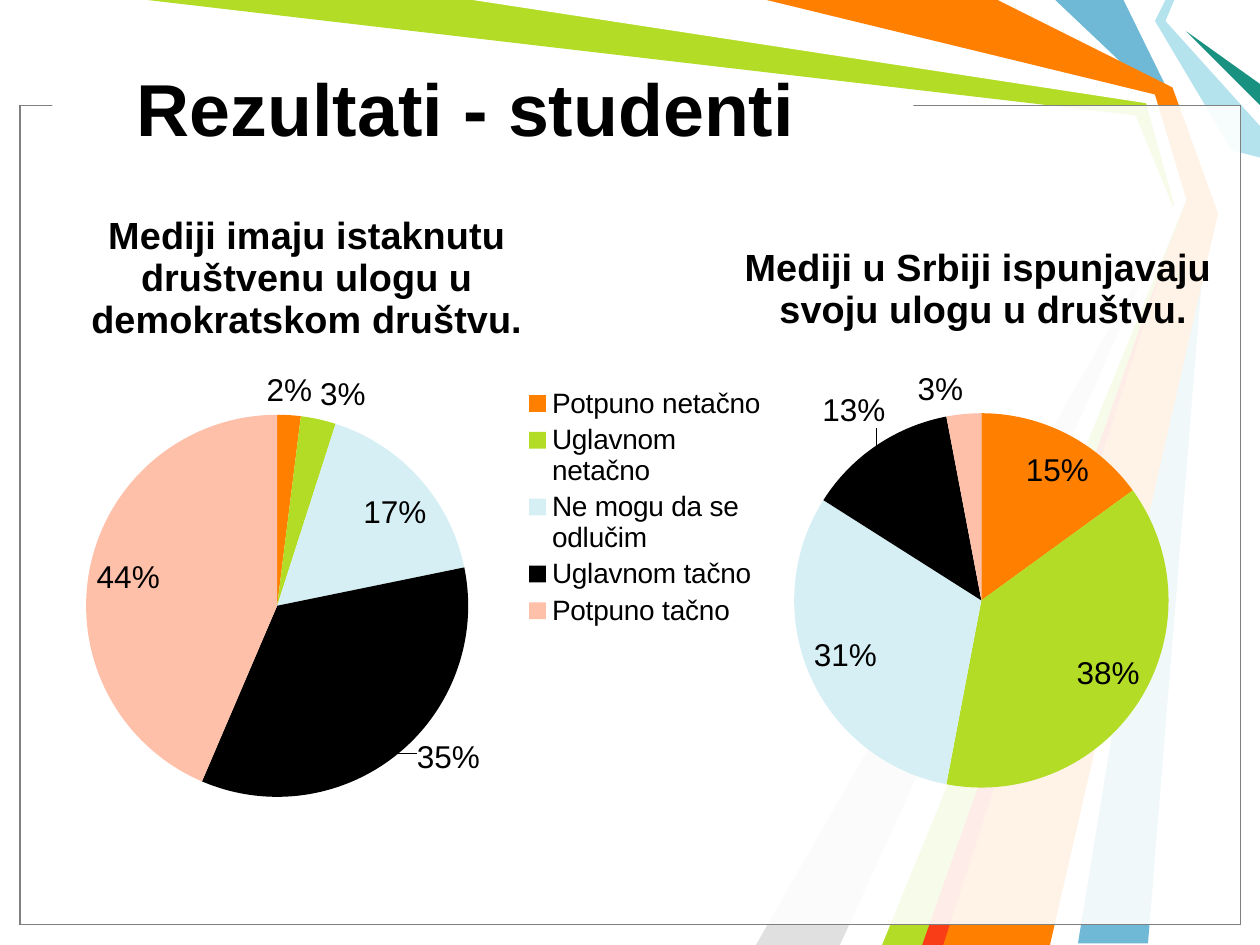
from lxml import etree
from pptx import Presentation
from pptx import util as u
from pptx.chart import data as chart_data
from pptx.dml.color import RGBColor
from pptx.enum import chart as ch, shapes, text
from pptx.oxml import ns

ORANGE = RGBColor(0xFF, 0x7F, 0x00)
GREEN = RGBColor(0xB3, 0xDC, 0x27)
ICE = RGBColor(0xD6, 0xEF, 0xF5)
BLACK = RGBColor(0, 0, 0)
PEACH = RGBColor(0xFF, 0xC0, 0xAA)
BLUE = RGBColor(0x6F, 0xB9, 0xD7)
SILVER = RGBColor(0xE0, 0xE0, 0xE0)
WHITE = RGBColor(0xFF, 0xFF, 0xFF)
AQUA = RGBColor(0xB4, 0xE3, 0xEE)
TEAL = RGBColor(0x18, 0x91, 0x80)
RED = RGBColor(0xF9, 0x3D, 0x17)
GRAY = RGBColor(0x80, 0x80, 0x80)

FONT = "Arial"
SLICE_COLORS = [ORANGE, GREEN, ICE, BLACK, PEACH]
BLACK_SLICE = 3
RIBBONS = [
    (BLUE, [(642, 0), (669, 55), (690, 120), (656, 539), (616, 539),
            (684, 120), (660, 54), (603, 0)]),
    (GREEN, [(84, 0), (276, 0), (658, 56), (678, 122), (534, 540),
             (498, 540), (673, 125), (649, 66)]),
    (SILVER, [(480, 540), (667, 130), (432, 540)]),
    (WHITE, [(270, 0), (655, 59), (671, 117), (486, 540), (504, 540),
             (678, 114), (660, 54), (432, 0)]),
    (AQUA, [(666, 0), (660, 12), (704, 86), (720, 90), (720, 72),
            (666, 12), (671, 0)]),
    (TEAL, [(720, 60), (678, 18), (720, 48)]),
    (ORANGE, [(438, 0), (570, 0), (670, 50), (696, 122), (600, 540),
              (528, 540), (678, 114), (660, 54)]),
    (RED, [(527, 540), (671, 132), (539, 540)]),
]


def points(box):
    return [u.Pt(length) for length in box]


def paint(shape, fill, line=None):
    shape.shadow.inherit = False
    shape.fill.solid()
    shape.fill.fore_color.rgb = fill
    if line is None:
        shape.line.fill.background()
    else:
        shape.line.color.rgb = line
        shape.line.width = u.Pt(0.75)


def add_ribbons(page):
    for color, corners in RIBBONS:
        builder = page.shapes.build_freeform(*corners[0], scale=u.Pt(1))
        builder.add_line_segments(corners[1:], close=True)
        paint(builder.convert_to_shape(), color)


def add_frame(page, box, gap):
    for line in (BLACK, GRAY):
        veil = page.shapes.add_shape(shapes.MSO_SHAPE.RECTANGLE, *points(box))
        paint(veil, WHITE, line)
        color = veil.element.xpath("p:spPr/a:solidFill/a:srgbClr")[0]
        etree.SubElement(color, ns.qn("a:alpha"), val="69000")
    left, top, width, height = gap
    mask = page.shapes.add_shape(
        shapes.MSO_SHAPE.RECTANGLE,
        *points((box[0] + left, box[1] + top, width, height)))
    paint(mask, WHITE)


def add_title(page, box, words):
    title = page.shapes.title
    title.left, title.top, title.width, title.height = points(box)
    title.text_frame.text = words
    title.text_frame.vertical_anchor = text.MSO_ANCHOR.MIDDLE
    para = title.text_frame.paragraphs[0]
    para.alignment = text.PP_ALIGN.LEFT
    para.font.name = FONT
    para.font.size = u.Pt(42)
    para.font.bold = True
    para.font.color.rgb = BLACK
    title.element.getparent().append(title.element)


def set_layout(parent, index, **values):
    for old in parent.findall(ns.qn("c:layout")):
        parent.remove(old)
    layout = etree.Element(ns.qn("c:layout"))
    manual = etree.SubElement(layout, ns.qn("c:manualLayout"))
    for tag, value in values.items():
        etree.SubElement(manual, ns.qn(f"c:{tag}"), val=str(value))
    parent.insert(index, layout)


def add_pie(page, box, heading, categories, values, name, heading_at, pie_at,
            label_shift, legend_at=None):
    data = chart_data.CategoryChartData()
    data.categories = categories
    data.add_series(name, values)
    chart = page.shapes.add_chart(
        ch.XL_CHART_TYPE.PIE, *points(box), data).chart
    chart.font.name = FONT
    chart.font.size = u.Pt(18)
    chart.font.color.rgb = BLACK

    chart.has_title = True
    frame = chart.chart_title.text_frame
    frame.text = heading
    for para in frame.paragraphs:
        para.font.name = FONT
        para.font.size = u.Pt(21.6)
        para.font.bold = True
        para.font.color.rgb = BLACK
    set_layout(chart.element.xpath("c:chart/c:title")[0], 1,
               xMode="edge", yMode="edge", x=heading_at[0], y=heading_at[1])

    plot = chart.plots[0]
    plot.vary_by_categories = True
    series = plot.series[0]
    for index, color in enumerate(SLICE_COLORS):
        fill = series.points[index].format.fill
        fill.solid()
        fill.fore_color.rgb = color
    labels = series.data_labels
    labels.show_value = False
    labels.show_percentage = True
    labels.number_format = "0%"
    labels.number_format_is_linked = False
    labels.position = ch.XL_LABEL_POSITION.BEST_FIT
    label = series.points[BLACK_SLICE].data_label
    label.position = ch.XL_LABEL_POSITION.OUTSIDE_END
    element = chart.element.xpath(".//c:dLbl")[0]
    element.find(ns.qn("c:showVal")).set("val", "0")
    element.find(ns.qn("c:showPercent")).set("val", "1")
    set_layout(element, 1, x=label_shift[0], y=label_shift[1])

    x, y, w, h = pie_at
    set_layout(chart.element.xpath("c:chart/c:plotArea")[0], 0,
               layoutTarget="inner", xMode="edge", yMode="edge",
               x=x, y=y, w=w, h=h)
    chart.has_legend = legend_at is not None
    if legend_at:
        chart.legend.position = ch.XL_LEGEND_POSITION.RIGHT
        chart.legend.include_in_layout = False
        chart.legend.font.name = FONT
        chart.legend.font.size = u.Pt(16)
        chart.legend.font.color.rgb = BLACK
        x, y, w, h = legend_at
        set_layout(chart.element.xpath("c:chart/c:legend")[0], 1,
                   xMode="edge", yMode="edge", x=x, y=y, w=w, h=h)


def main():
    deck = Presentation()
    deck.slide_width, deck.slide_height = u.Pt(720), u.Pt(540)
    page = deck.slides.add_slide(deck.slide_layouts[5])
    add_ribbons(page)
    add_frame(page, (11.5, 60.5, 697.5, 468), (18.5, -7.5, 492, 12.5))
    add_title(page, (71, 16, 496, 90), "Rezultati - studenti")
    role = "Mediji imaju istaknutu društvenu ulogu u demokratskom društvu."
    add_pie(page, (36, 101.5, 408, 376.5), role,
            ["Potpuno netačno", "Uglavnom netačno", "Ne mogu da se odlučim",
             "Uglavnom tačno", "Potpuno tačno"],
            [2, 3, 17, 35, 44], role, (0.03, 0.04), (0.03, 0.36, 0.54, 0.58),
            (0.02, -0.03), (0.64, 0.31, 0.35, 0.38))
    add_pie(page, (366, 134.5, 382, 326),
            "Mediji u Srbiji ispunjavaju \nsvoju ulogu u društvu.",
            ["1", "2", "3", "4", ""], [15, 38, 31, 13, 3], "Series 1",
            (0.15, 0.01), (0.23, 0.31, 0.56, 0.66), (0.02, -0.02))
    deck.save("out.pptx")


if __name__ == "__main__":
    main()
